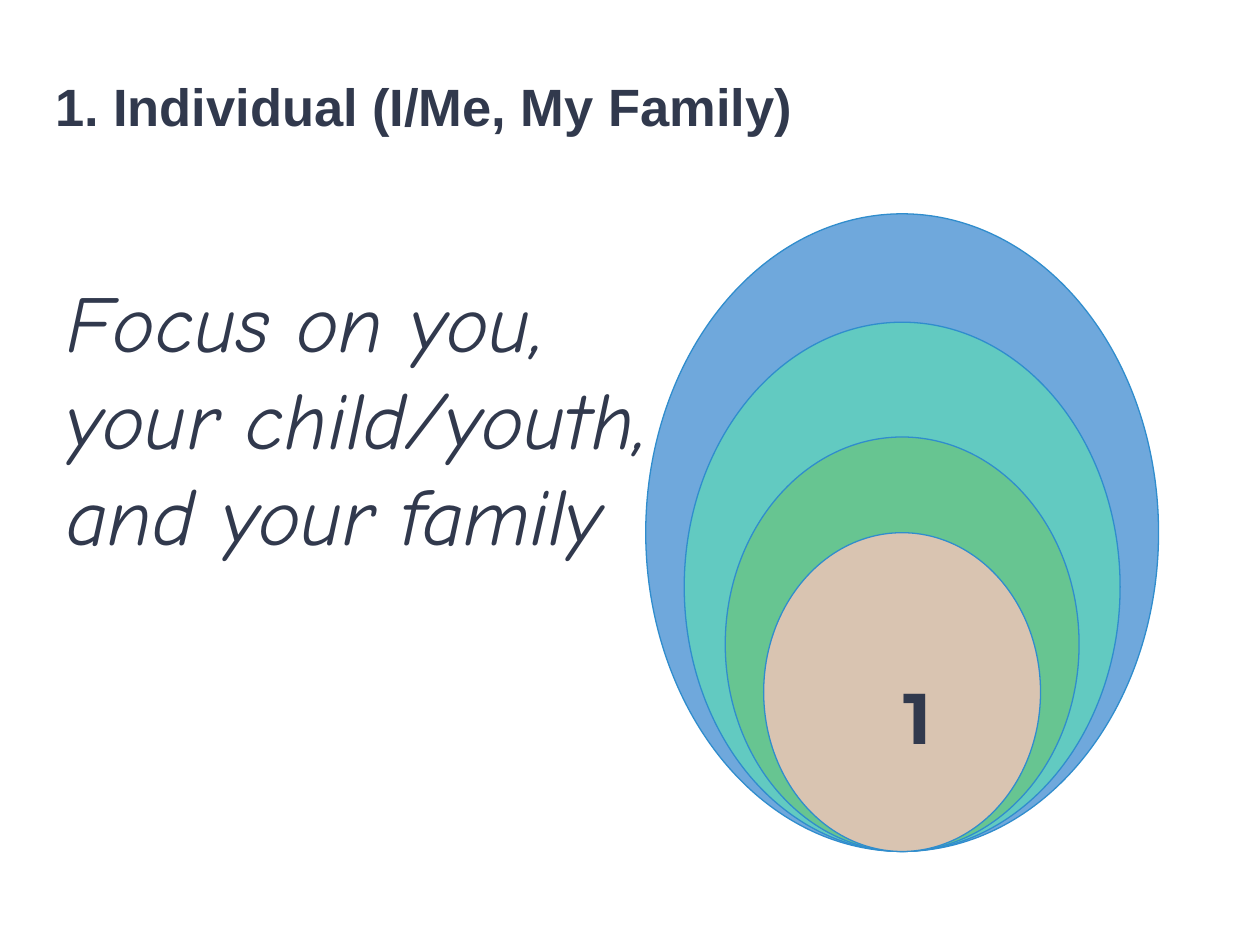
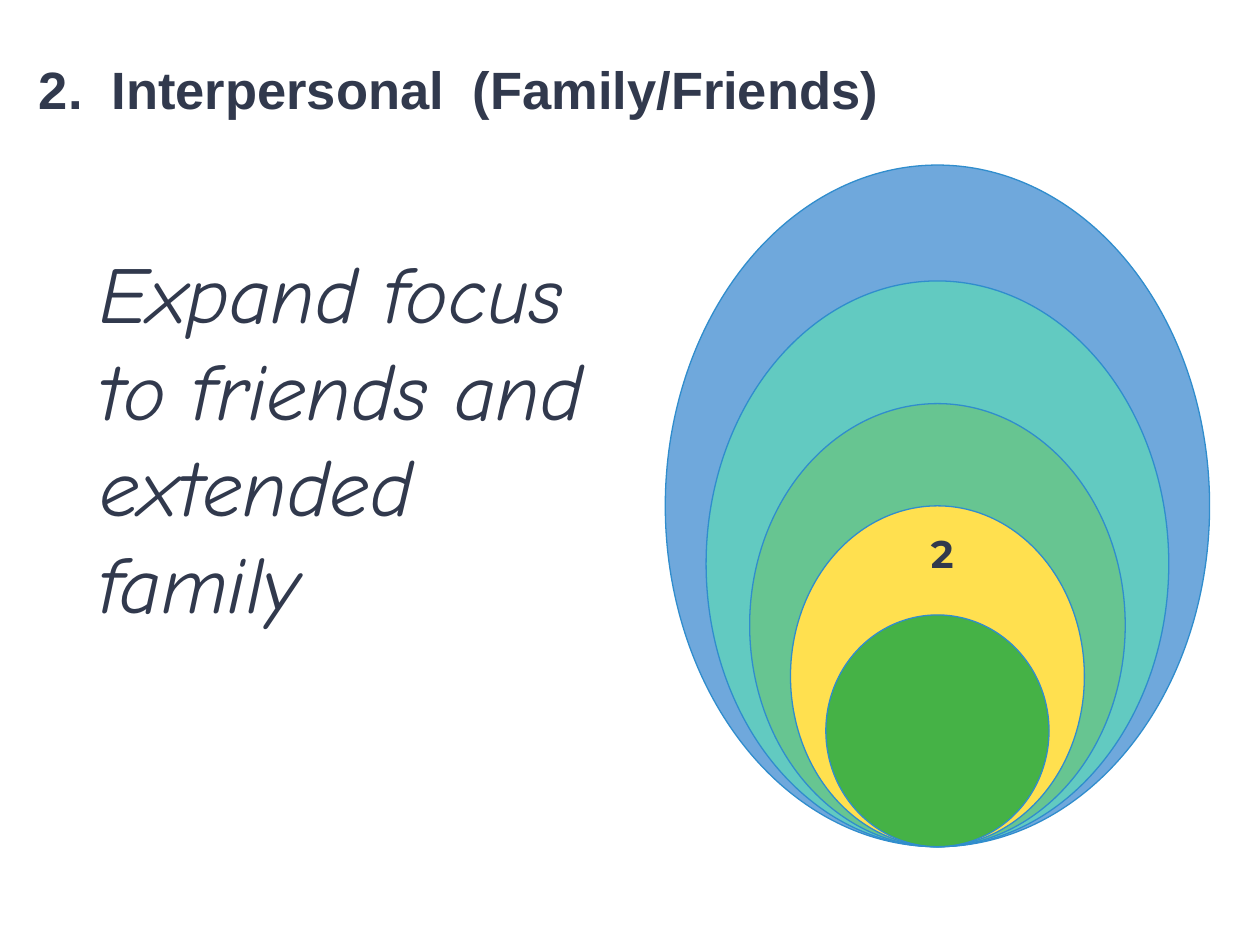
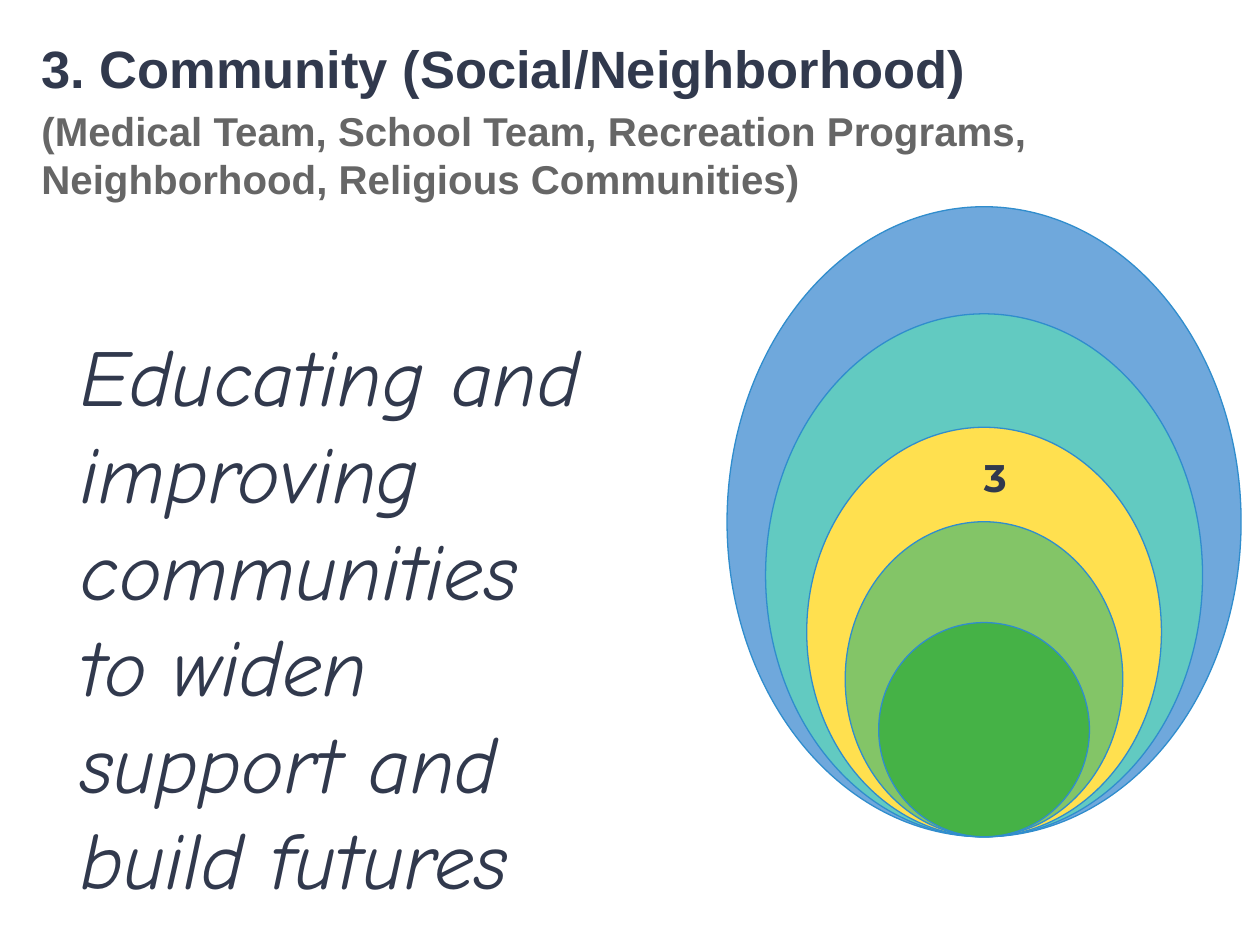
from dataclasses import dataclass

from lxml.etree import SubElement
from pptx import Presentation
from pptx.dml.color import RGBColor
from pptx.enum.shapes import MSO_SHAPE
from pptx.enum.text import MSO_ANCHOR, MSO_AUTO_SIZE
from pptx.oxml.ns import qn
from pptx.util import Emu, Inches, Pt

INK, GREY, OUTLINE = "31394D", "666666", "308DCD"
BLUE, TEAL, MINT, SAND = "6FA8DC", "62CAC1", "67C591", "D9C4B1"
YELLOW, LIME, GREEN = "FFE04F", "83C567", "45B246"

# Width and height of each ring as a share of the outermost one
RING_SHARES = [(1, 1), (0.85, 0.83), (0.69, 0.65), (0.54, 0.5), (0.41, 0.34)]

TITLE = dict(name="Arial", size=Pt(30), bold=True)
SUBTITLE = dict(name="Arial", size=Pt(23), bold=True)
MESSAGE = dict(name="Comic Neue", size=Pt(46), italic=True)
TITLE_MARGINS = dict(margin_top=Inches(0.05), margin_bottom=Inches(0.05),
                     vertical_anchor=MSO_ANCHOR.BOTTOM)
BODY_MARGINS = dict(margin_top=Inches(0.1), margin_bottom=Inches(0.1),
                    vertical_anchor=MSO_ANCHOR.TOP)


@dataclass
class Box:
    """Place and size in percent of the slide's width and height."""
    left: float
    top: float
    width: float
    height: float


@dataclass
class Rings:
    """Nested ellipses that share a centre line and a bottom, in percent."""
    center: float
    bottom: float
    width: float
    height: float
    colors: list[str]


@dataclass
class Level:
    title: str
    title_box: Box
    message: list[str]
    message_box: Box
    rings: Rings
    number: str
    number_box: Box
    number_size: int = 22
    subtitle: str = ""
    auto_number: bool = False


LEVELS = [
    Level("Individual (I/Me, My Family)", Box(3, 7.07, 81.6, 8.13),
          ["Focus on you,", "your child/youth,", "and your family"],
          Box(4.3, 27.47, 49.9, 35.33),
          Rings(71.6, 90.1, 40.7, 67.47, [BLUE, TEAL, MINT, SAND]),
          "1", Box(70.7, 69.87, 3.1, 11.87), number_size=41, auto_number=True),
    Level("2.  Interpersonal  (Family/Friends)", Box(2.1, 5.2, 95.9, 8.13),
          ["Expand focus to friends and extended family"],
          Box(6.9, 24.4, 43.2, 33.6),
          Rings(74.4, 89.6, 43.2, 72.13, [BLUE, TEAL, MINT, YELLOW, GREEN]),
          "2", Box(72.9, 54.8, 3.1, 7.6)),
    Level("3. Community (Social/Neighborhood)", Box(2.3, 2.93, 96.8, 19.2),
          ["Educating and improving communities to widen support and build futures"],
          Box(5.4, 33.2, 43.2, 54.27),
          Rings(78.1, 88.55, 40.8, 66.67, [BLUE, TEAL, YELLOW, LIME, GREEN]),
          "3", Box(77.1, 46.67, 2.2, 7.6),
          subtitle="(Medical Team, School Team, Recreation Programs, "
                   "Neighborhood, Religious Communities)"),
]

prs = Presentation()
prs.slide_width, prs.slide_height = Inches(10), Inches(7.5)


def rgb(color: str) -> RGBColor:
    return RGBColor.from_string(color)


def place(box: Box) -> tuple[Emu, Emu, Emu, Emu]:
    w, h = prs.slide_width / 100, prs.slide_height / 100
    return (Emu(round(box.left * w)), Emu(round(box.top * h)),
            Emu(round(box.width * w)), Emu(round(box.height * h)))


def add_text(s, box: Box, lines: list[tuple], margins: dict, before: int = 0):
    """Add a text box; each line is its text, font values and colour."""
    tf = s.shapes.add_textbox(*place(box)).text_frame
    tf.word_wrap = True
    tf.auto_size = MSO_AUTO_SIZE.SHAPE_TO_FIT_TEXT
    for name, value in margins.items():
        setattr(tf, name, value)
    for i, (text, font, color) in enumerate(lines):
        p = tf.add_paragraph() if i else tf.paragraphs[0]
        p.space_before = Pt(before)
        r = p.add_run()
        r.text = text
        r.font.color.rgb = rgb(color)
        for name, value in font.items():
            setattr(r.font, name, value)
    return tf


def number_paragraph(p) -> None:
    """Give a paragraph an automatic number with a hanging indent."""
    pPr = p._p.get_or_add_pPr()
    pPr.set("marL", str(Inches(0.5)))
    pPr.set("indent", str(Inches(-0.46)))
    color = SubElement(pPr, qn("a:buClr"))
    SubElement(color, qn("a:srgbClr"), val=INK)
    SubElement(pPr, qn("a:buFont"), typeface=TITLE["name"])
    SubElement(pPr, qn("a:buAutoNum"), type="arabicPeriod")


def add_rings(s, rings: Rings) -> None:
    for color, (wide, high) in zip(rings.colors, RING_SHARES):
        width, height = rings.width * wide, rings.height * high
        box = Box(rings.center - width / 2, rings.bottom - height, width, height)
        sp = s.shapes.add_shape(MSO_SHAPE.OVAL, *place(box))
        sp.shadow.inherit = False
        sp.fill.solid()
        sp.fill.fore_color.rgb = rgb(color)
        sp.line.color.rgb = rgb(OUTLINE)
        sp.line.width = Pt(0.75)


def add_level(level: Level) -> None:
    s = prs.slides.add_slide(prs.slide_layouts[6])
    heading = [(level.title, TITLE, INK)]
    if level.subtitle:
        heading.append((level.subtitle, SUBTITLE, GREY))
    tf = add_text(s, level.title_box, heading, TITLE_MARGINS, before=4)
    if level.auto_number:
        number_paragraph(tf.paragraphs[0])
    add_text(s, level.message_box,
             [(line, MESSAGE, INK) for line in level.message], BODY_MARGINS)
    add_rings(s, level.rings)
    number_font = dict(name="Montserrat", size=Pt(level.number_size), bold=True)
    add_text(s, level.number_box, [(level.number, number_font, INK)], BODY_MARGINS)


def main() -> None:
    for level in LEVELS:
        add_level(level)
    prs.save("out.pptx")


if __name__ == "__main__":
    main()
